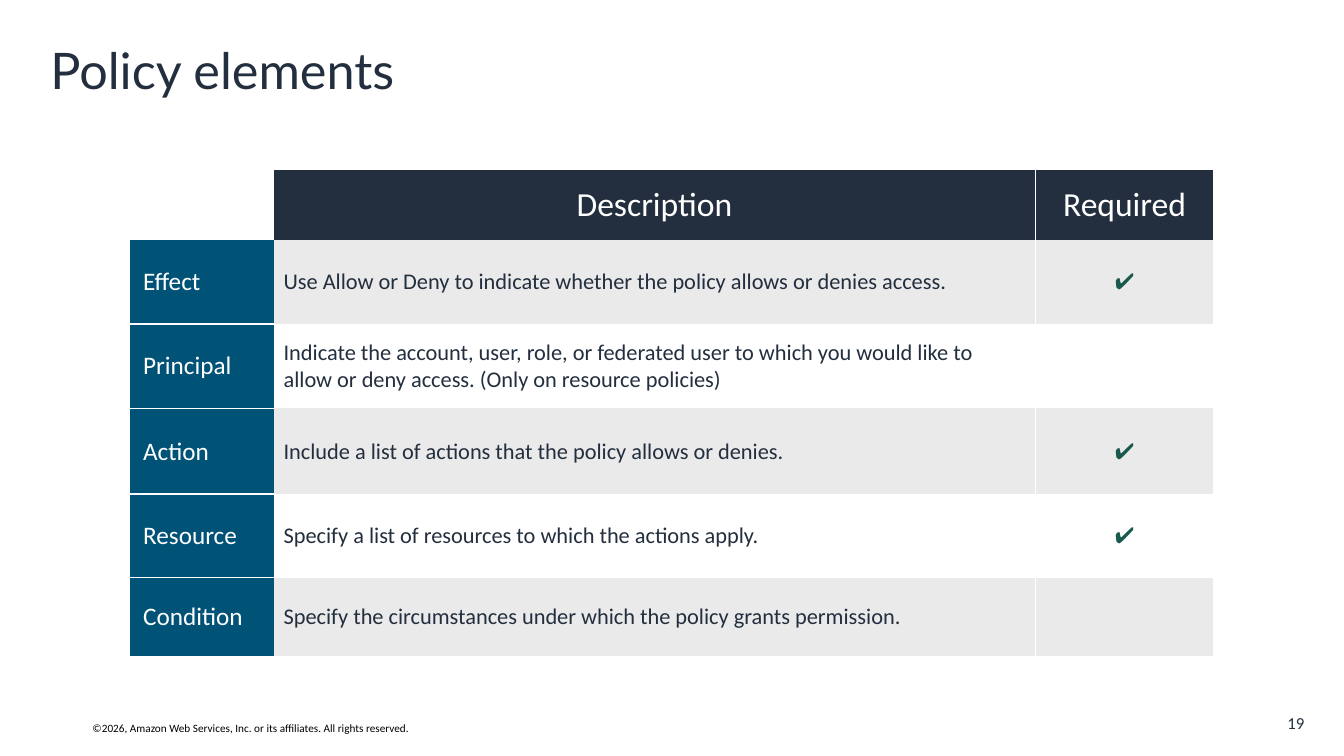
from lxml import etree
from pptx import Presentation
from pptx.dml.color import RGBColor
from pptx.enum.text import MSO_ANCHOR as Anchor, MSO_AUTO_SIZE as AutoSize, PP_ALIGN as Align
from pptx.oxml.ns import qn
from pptx.util import Pt

NAVY = RGBColor(0x23, 0x2F, 0x3E)
BLUE = RGBColor(0x00, 0x52, 0x76)
GREY = RGBColor(0xEA, 0xEA, 0xEA)
GREEN = RGBColor(0x19, 0x59, 0x4E)
WHITE = RGBColor(0xFF, 0xFF, 0xFF)
BLACK = RGBColor(0, 0, 0)


def style_text(frame, text, size, color, align=Align.LEFT, font="Calibri", bold=False):
    frame.text = text
    para = frame.paragraphs[0]
    para.alignment = align
    para.font.size = Pt(size)
    for span in para.runs:
        span.font.name = font
        span.font.size = Pt(size)
        span.font.bold = bold
        span.font.color.rgb = color


def set_borders(cell, widths):
    """Draw white borders of the given widths; the other sides get none."""
    properties = cell._tc.get_or_add_tcPr()
    for index, side in enumerate("LRTB"):
        line = etree.Element(qn(f"a:ln{side}"))
        if side in widths:
            line.set("w", str(int(Pt(widths[side]))))
            fill = etree.SubElement(line, qn("a:solidFill"))
            etree.SubElement(fill, qn("a:srgbClr")).set("val", str(WHITE))
        else:
            etree.SubElement(line, qn("a:noFill"))
        properties.insert(index, line)


deck = Presentation()
deck.slide_width, deck.slide_height = Pt(960), Pt(540)
page = deck.slides.add_slide(deck.slide_layouts[5])

# Title
title = page.shapes.title
title.left, title.top, title.width, title.height = Pt(28.8), Pt(23.8), Pt(902.9), Pt(57.6)
title.text_frame.vertical_anchor = Anchor.MIDDLE
title.text_frame.auto_size = AutoSize.NONE
style_text(title.text_frame, "Policy elements", 36, NAVY, font="Lato")
title.text_frame.paragraphs[0].line_spacing = 0.9

# Policy table
rows = [
    ("", "Description", "Required"),
    ("Effect", "Use Allow or Deny to indicate whether the policy allows or denies access.", "✔"),
    ("Principal", "Indicate the account, user, role, or federated user to which you would like to "
     "allow or deny access. (Only on resource policies)", ""),
    ("Action", "Include a list of actions that the policy allows or denies.", "✔"),
    ("Resource", "Specify a list of resources to which the actions apply.", "✔"),
    ("Condition", "Specify the circumstances under which the policy grants permission.", ""),
]
column_widths = [102.5, 544.3, 127.4]
row_heights = [50, 60, 60.6, 61.4, 59.4, 56.4]
table = page.shapes.add_table(len(rows), 3, Pt(92.9), Pt(121.2),
                              Pt(sum(column_widths)), Pt(sum(row_heights))).table
table.first_row = table.horz_banding = False
for column, width in zip(table.columns, column_widths):
    column.width = Pt(width)
for row, height in zip(table.rows, row_heights):
    row.height = Pt(height)

last = len(rows) - 1
for r, texts in enumerate(rows):
    for c, text in enumerate(texts):
        cell = table.cell(r, c)
        cell.vertical_anchor = Anchor.MIDDLE
        borders = {}
        if r == 0:
            fill, style = NAVY, (24, WHITE, Align.CENTER)
        elif c == 0:
            fill, style = BLUE, (18, WHITE)
            cell.margin_left = cell.margin_right = Pt(9.4)
            cell.margin_top = cell.margin_bottom = Pt(5)
            if r > 1:
                borders["T"] = 1.5
            if r < last:
                borders["B"] = 1.5
        else:
            fill = GREY if r % 2 else WHITE
            style = (16, NAVY) if c == 1 else (16, GREEN, Align.CENTER, "Calibri", True)
        if c == 1:
            borders["R"] = 1
        elif c == 2:
            borders.update(L=1, R=1)
            if r == 0:
                borders["T"] = 1
            elif r == last:
                borders["B"] = 1
        if r == c == 0:
            cell.fill.background()
        else:
            cell.fill.solid()
            cell.fill.fore_color.rgb = fill
        style_text(cell.text_frame, text, *style)
        set_borders(cell, borders)

# Copyright line
copyright_box = page.shapes.add_textbox(Pt(59), Pt(511.9), Pt(269.3), Pt(17))
copyright_box.text_frame.word_wrap = False
copyright_box.text_frame.auto_size = AutoSize.SHAPE_TO_FIT_TEXT
style_text(copyright_box.text_frame,
           "©2026, Amazon Web Services, Inc. or its affiliates. All rights reserved.", 8, BLACK)

# Page number
number_box = page.shapes.add_textbox(Pt(893.5), Pt(507.6), Pt(38.2), Pt(18))
frame = number_box.text_frame
frame.word_wrap = True
frame.vertical_anchor = Anchor.MIDDLE
frame.margin_left = frame.margin_right = frame.margin_top = frame.margin_bottom = 0
style_text(frame, "19", 12, NAVY, Align.RIGHT)

deck.save("out.pptx")
